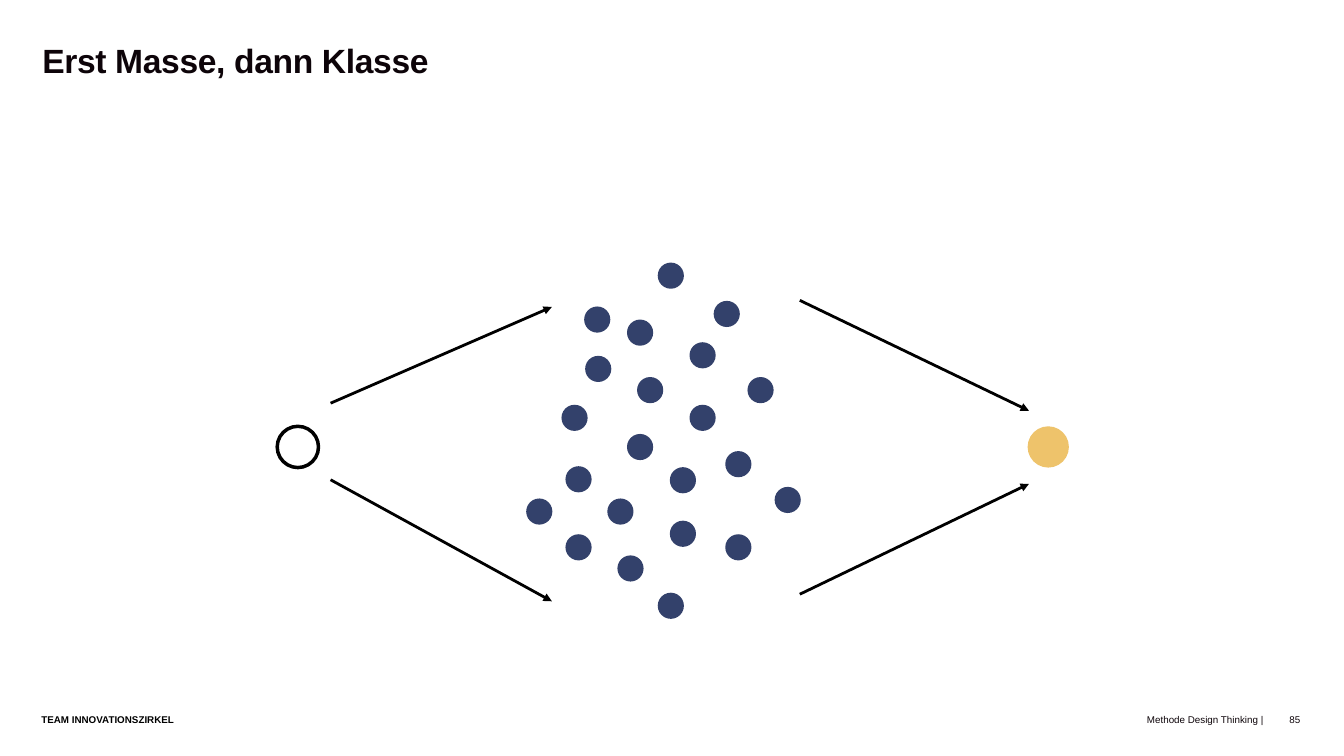
from dataclasses import dataclass

from lxml.etree import SubElement
from pptx import Presentation
from pptx.dml.color import RGBColor
from pptx.enum.shapes import MSO_CONNECTOR, MSO_SHAPE
from pptx.enum.text import PP_ALIGN
from pptx.oxml.ns import qn
from pptx.util import Pt


@dataclass(frozen=True)
class Theme:
    font: str = "Arial"
    ink: RGBColor = RGBColor(0x0D, 0x04, 0x09)
    black: RGBColor = RGBColor(0, 0, 0)
    white: RGBColor = RGBColor(255, 255, 255)
    idea: RGBColor = RGBColor(0x33, 0x41, 0x6B)
    solution: RGBColor = RGBColor(0xEE, 0xC3, 0x6B)
    title_size: int = 48
    footer_size: int = 14


theme = Theme()
presentation = Presentation()
presentation.slide_width = Pt(1920)
presentation.slide_height = Pt(1080)
slide = presentation.slides.add_slide(presentation.slide_layouts[6])


def add_text(text, left, top, width, height, size, spacing, color, bold, alignment):
    box = slide.shapes.add_textbox(Pt(left), Pt(top), Pt(width), Pt(height))
    frame = box.text_frame
    frame.margin_left = frame.margin_right = frame.margin_top = frame.margin_bottom = 0
    frame.word_wrap = True
    paragraph = frame.paragraphs[0]
    paragraph.text = text
    paragraph.alignment = alignment
    paragraph.line_spacing = Pt(spacing)
    paragraph.font.name = theme.font
    paragraph.font.size = Pt(size)
    paragraph.font.bold = bold
    paragraph.font.color.rgb = color
    return paragraph


def add_circle(left, top, diameter, color):
    circle = slide.shapes.add_shape(
        MSO_SHAPE.OVAL, Pt(left), Pt(top), Pt(diameter), Pt(diameter)
    )
    circle.shadow.inherit = False
    circle.fill.solid()
    circle.fill.fore_color.rgb = color
    circle.line.fill.background()
    return circle


title = add_text("Erst Masse, dann Klasse", 60.5, 60, 1800, 108,
                 theme.title_size, 54, theme.ink, True, PP_ALIGN.LEFT)
title.runs[0].font._element.set("spc", "-50")

footers = [
    ("TEAM INNOVATIONSZIRKEL", 59, 883, theme.black, True, PP_ALIGN.LEFT),
    ("Methode Design Thinking |", 930, 875, theme.ink, False, PP_ALIGN.RIGHT),
    ("85", 1837.6, 20, theme.ink, False, PP_ALIGN.RIGHT),
]
for text, left, width, color, bold, alignment in footers:
    add_text(text, left, 1020, width, 16.5, theme.footer_size, 16, color, bold, alignment)

ideas = [
    (834.5, 437.8), (895.7, 456.5), (939.6, 375.1), (985, 488.9),
    (835.9, 508.3), (802.1, 578.2), (895.7, 619.9), (910.1, 538.6),
    (985, 578.2), (1019.5, 429.8), (1067.8, 538.6), (807.8, 666),
    (867.6, 712.1), (1036.1, 644.4), (956.9, 743.8), (807.8, 763.2),
    (751.7, 712.1), (1106.6, 695.5), (882, 793.4), (939.6, 846.7),
    (956.9, 667.4), (1036.1, 763.2),
]
for left, top in ideas:
    add_circle(left, top, 37.4, theme.idea)

add_circle(1468, 609, 59, theme.solution)
question = add_circle(396, 609, 59, theme.white)
question.line.color.rgb = theme.black
question.line.width = Pt(5)

arrows = [
    (472.3, 685.4, 788.4, 859),
    (472.3, 576, 788.4, 438.5),
    (1142.6, 848.9, 1470, 691.2),
    (1142.6, 429.1, 1470, 586.8),
]
for start_x, start_y, end_x, end_y in arrows:
    arrow = slide.shapes.add_connector(
        MSO_CONNECTOR.STRAIGHT, Pt(start_x), Pt(start_y), Pt(end_x), Pt(end_y)
    )
    arrow.line.color.rgb = theme.black
    arrow.line.width = Pt(4)
    SubElement(arrow.line._get_or_add_ln(), qn("a:tailEnd"), type="triangle")
    SubElement(arrow._element.spPr, qn("a:effectLst"))

presentation.save("out.pptx")
